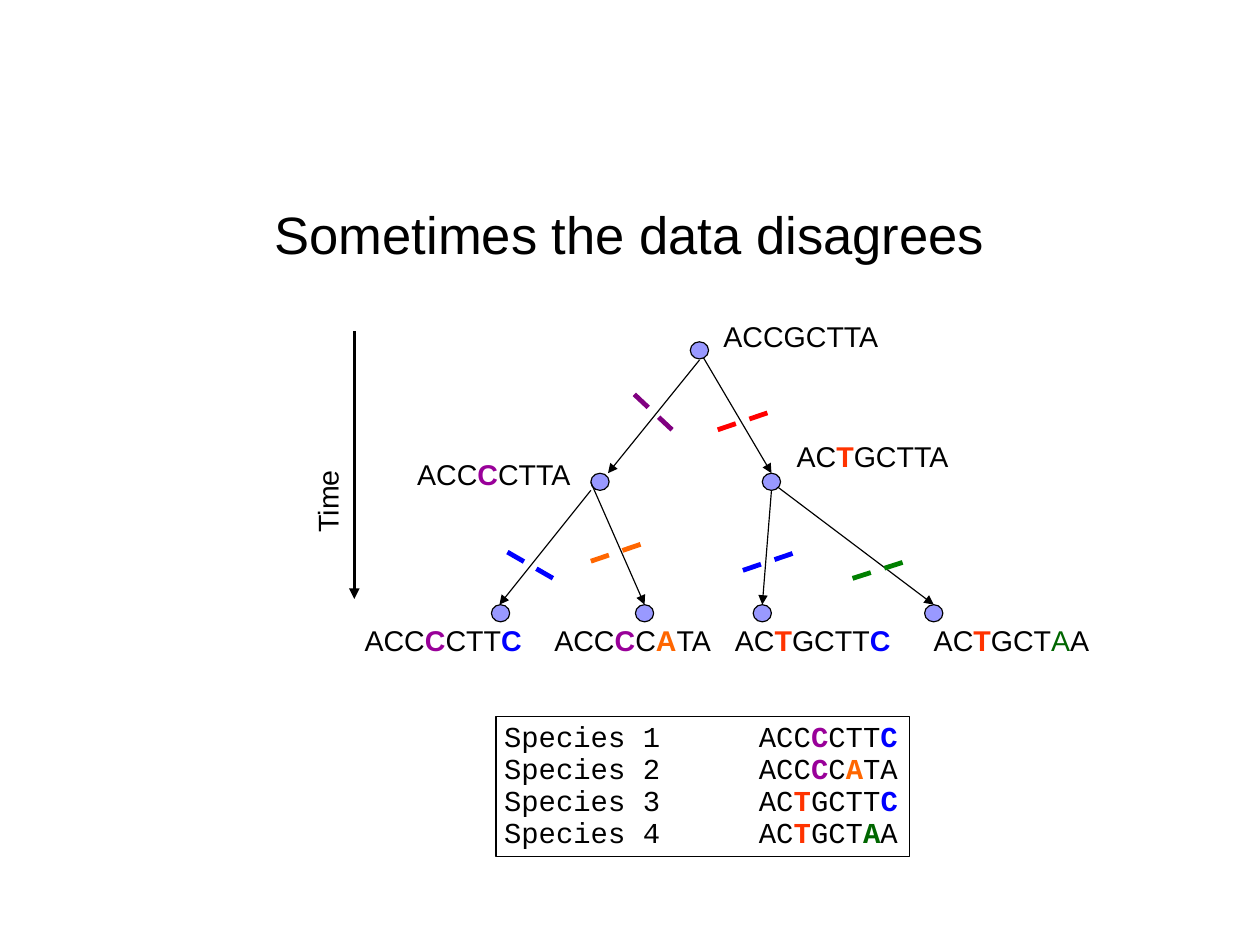
from itertools import groupby

from lxml import etree
from pptx import Presentation
from pptx.dml.color import RGBColor
from pptx.enum.dml import MSO_LINE
from pptx.enum.shapes import MSO_CONNECTOR, MSO_SHAPE
from pptx.enum.text import MSO_ANCHOR, PP_ALIGN
from pptx.oxml.ns import qn
from pptx.util import Inches, Pt

STRAIGHT = MSO_CONNECTOR.STRAIGHT
OVAL, RECT = MSO_SHAPE.OVAL, MSO_SHAPE.RECTANGLE
DASH = MSO_LINE.DASH
LEFT, CENTER = PP_ALIGN.LEFT, PP_ALIGN.CENTER
TOP, MIDDLE = MSO_ANCHOR.TOP, MSO_ANCHOR.MIDDLE

COLORS = {
    "ink": "000000", "node": "9999FF", "purple": "990099", "violet": "800080",
    "blue": "0000FF", "orange": "FF6600", "vermilion": "FF3300", "red": "FF0000",
    "forest": "006600", "green": "008000",
}
NODE_W, NODE_H = 0.16, 0.15
LEAF_TOP, LEAF_LABEL_TOP = 5.29, 5.44

SPECIES = [
    ("ACCCCTTC", {3: "purple", 7: "blue"}),
    ("ACCCCATA", {3: "purple", 5: "orange"}),
    ("ACTGCTTC", {2: "vermilion", 7: "blue"}),
    ("ACTGCTAA", {2: "vermilion", 6: "forest"}),
]
LEAF_LABELS = [(3.12, 1.87), (4.78, 1.86), (6.36, 1.85), (8.1, 1.83)]
ANCESTORS = [
    (6.26, 2.78, 1.84, "ACCGCTTA", {}),
    (6.9, 3.83, 1.81, "ACTGCTTA", {2: "vermilion"}),
    (3.58, 3.98, 1.83, "ACCCCTTA", {3: "purple"}),
]
ROOT_BRANCHES = [(6.12, 3.15, 5.32, 4.14), (6.12, 3.07, 6.75, 4.14)]
LEAF_BRANCHES = [
    (6.75, 4.29, 6.67, LEAF_TOP), (6.75, 4.22, 8.17, LEAF_TOP),
    (5.17, 4.29, 4.37, LEAF_TOP), (5.17, 4.22, 5.64, LEAF_TOP),
]
LEFT_NODE = (5.17, 4.14)
NODES = [(6.04, 2.99), (6.67, 4.14)] + [(x, LEAF_TOP) for x in (4.3, 5.56, 6.59, 8.09)]
MUTATIONS = [
    (5.55, 3.45, 5.88, 3.76, "violet"),
    (7.46, 5.06, 7.93, 4.91, "green"),
    (6.28, 3.76, 6.75, 3.6, "red"),
    (5.17, 4.91, 5.64, 4.75, "orange"),
    (4.44, 4.83, 4.84, 5.06, "blue"),
    (6.5, 4.99, 6.97, 4.83, "blue"),
]


def rgb(name):
    return RGBColor.from_string(COLORS[name])


def add_run(p, text, font="Arial", size=18, color="ink", bold=False):
    r = p.add_run()
    r.text = text
    r.font.name = font
    r.font.size = Pt(size)
    r.font.bold = bold
    r.font.color.rgb = rgb(color)


def add_sequence(p, letters, marks, plain=(), **fmt):
    for color, group in groupby(enumerate(letters), lambda item: marks.get(item[0], "ink")):
        text = "".join(letter for _, letter in group)
        add_run(p, text, color=color, bold=color != "ink" and color not in plain, **fmt)


class TreeSlide:
    def __init__(self, prs):
        self.s = prs.slides.add_slide(prs.slide_layouts[5])

    def frame(self, sp, anchor=TOP):
        tf = sp.text_frame
        tf.word_wrap = True
        tf.vertical_anchor = anchor
        tf.margin_left = tf.margin_right = Inches(0.07)
        tf.margin_top = tf.margin_bottom = Inches(0.04)
        return tf

    def paragraph(self, p, align=LEFT):
        p.alignment = align
        p.line_spacing = 0.93
        p.space_before = Pt(0)
        return p

    def title(self, text, x, y, w, h):
        sp = self.s.shapes.title
        sp.left, sp.top, sp.width, sp.height = map(Inches, (x, y, w, h))
        p = self.paragraph(self.frame(sp, MIDDLE).paragraphs[0], CENTER)
        add_run(p, text, size=33.1)

    def label(self, x, y, w, h=0.42, rotation=0):
        sp = self.s.shapes.add_textbox(*map(Inches, (x, y, w, h)))
        sp.rotation = rotation
        return self.paragraph(self.frame(sp).paragraphs[0])

    def shape(self, kind, x, y, w, h, fill=None):
        sp = self.s.shapes.add_shape(kind, *map(Inches, (x, y, w, h)))
        sp.shadow.inherit = False
        if fill:
            sp.fill.solid()
            sp.fill.fore_color.rgb = rgb(fill)
        else:
            sp.fill.background()
        sp.line.color.rgb = rgb("ink")
        sp.line.width = Pt(0.75)
        return sp

    def node(self, x, y):
        self.shape(OVAL, x, y, NODE_W, NODE_H, "node")

    def line(self, x1, y1, x2, y2, color="ink", width=0.75, dash=None, arrow=True):
        sp = self.s.shapes.add_connector(STRAIGHT, *map(Inches, (x1, y1, x2, y2)))
        sp.line.color.rgb = rgb(color)
        sp.line.width = Pt(width)
        if dash:
            sp.line.dash_style = dash
        sp_pr = sp._element.spPr
        if arrow:
            etree.SubElement(sp_pr.find(qn("a:ln")), qn("a:tailEnd"), type="triangle")
        etree.SubElement(sp_pr, qn("a:effectLst"))

    def species_box(self, x, y, w, h):
        tf = self.frame(self.shape(RECT, x, y, w, h))
        fmt = {"font": "Courier New", "size": 18.2}
        for i, (letters, marks) in enumerate(SPECIES):
            p = self.paragraph(tf.add_paragraph() if i else tf.paragraphs[0])
            tabs = etree.SubElement(p._p.get_or_add_pPr(), qn("a:tabLst"))
            for stop in (1.62, 2.23):
                etree.SubElement(tabs, qn("a:tab"), pos=str(Inches(stop)), algn="l")
            add_run(p, f"Species {i + 1}\t\t", **fmt)
            add_sequence(p, letters, marks, **fmt)


def main():
    prs = Presentation()
    prs.slide_width, prs.slide_height = Pt(793.75), Pt(595.25)
    tree = TreeSlide(prs)
    tree.title("Sometimes the data disagrees", 1.79, 1.45, 7.44, 1.24)
    tree.line(3.1, 2.9, 3.1, 5.24, width=2.25)
    add_run(tree.label(2.53, 4.2, 0.7, 0.36, rotation=270), "Time")
    tree.species_box(4.34, 6.27, 3.62, 1.22)

    for branch in ROOT_BRANCHES:
        tree.line(*branch)
    tree.node(*LEFT_NODE)
    for branch in LEAF_BRANCHES:
        tree.line(*branch)
    for node in NODES:
        tree.node(*node)

    for x, y, w, letters, marks in ANCESTORS:
        add_sequence(tree.label(x, y, w), letters, marks)
    for (x, w), (letters, marks) in zip(LEAF_LABELS, SPECIES):
        add_sequence(tree.label(x, LEAF_LABEL_TOP, w), letters, marks, plain=("forest",))
    for *ends, color in MUTATIONS:
        tree.line(*ends, color=color, width=3, dash=DASH, arrow=False)
    prs.save("out.pptx")


if __name__ == "__main__":
    main()
